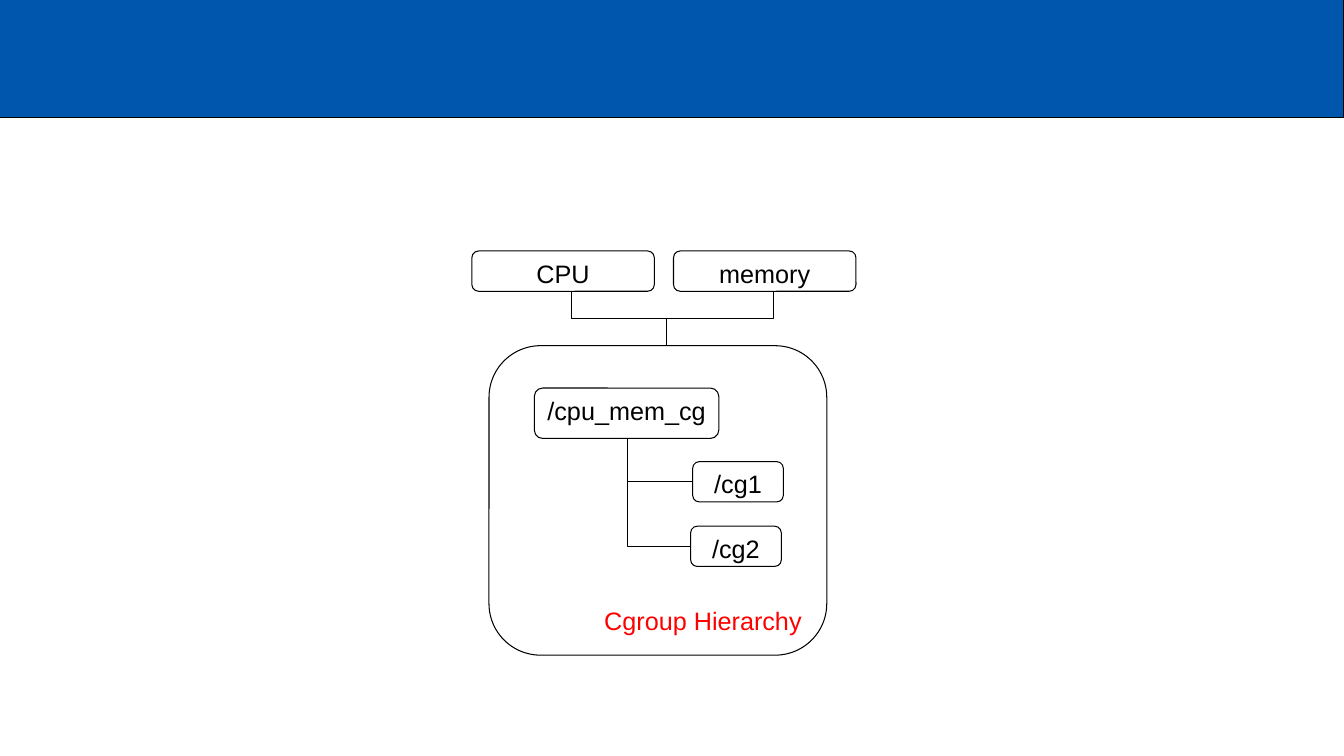
"""Build a slide showing a cgroup hierarchy with CPU and memory controllers."""
from pptx import Presentation
from pptx.dml.color import RGBColor
from pptx.enum import shapes, text
from pptx.oxml import parse_xml
from pptx.oxml.ns import nsdecls
from pptx.util import Inches, Pt

BLUE = RGBColor(0x00, 0x56, 0xAC)
BLACK = RGBColor(0x00, 0x00, 0x00)
WHITE = RGBColor(0xFF, 0xFF, 0xFF)
RED = RGBColor(0xFF, 0x00, 0x00)
RECT = shapes.MSO_SHAPE.RECTANGLE
ROUND = shapes.MSO_SHAPE.ROUNDED_RECTANGLE
TOP, BOTTOM = text.MSO_ANCHOR.TOP, text.MSO_ANCHOR.BOTTOM
CENTER, RIGHT = text.PP_ALIGN.CENTER, text.PP_ALIGN.RIGHT

prs = Presentation()
prs.slide_width, prs.slide_height = Inches(13.33), Inches(7.5)
s = prs.slides.add_slide(prs.slide_layouts[6])


def add_box(kind, x, y, w, h, fill=WHITE):
    sp = s.shapes.add_shape(kind, Inches(x), Inches(y), Inches(w), Inches(h))
    sp.shadow.inherit = False
    sp.fill.solid()
    sp.fill.fore_color.rgb = fill
    sp.line.color.rgb = BLACK
    sp.line.width = Pt(0.75)
    return sp


add_box(RECT, 0, 0, 13.33, 1.17, BLUE)

boxes = [
    ("CPU", 4.68, 2.49, 1.81, 0.4, CENTER, TOP, BLACK),
    ("memory", 6.68, 2.49, 1.81, 0.4, CENTER, TOP, BLACK),
    ("Cgroup Hierarchy", 4.85, 3.43, 3.35, 3.07, RIGHT, BOTTOM, RED),
    ("/cpu_mem_cg", 5.3, 3.85, 1.83, 0.5, CENTER, TOP, BLACK),
    ("/cg1", 6.87, 4.58, 0.9, 0.4, CENTER, TOP, BLACK),
    ("/cg2", 6.85, 5.22, 0.9, 0.4, CENTER, TOP, BLACK),
]
for label, x, y, w, h, align, anchor, color in boxes:
    tf = add_box(ROUND, x, y, w, h).text_frame
    tf.word_wrap = align == RIGHT
    tf.vertical_anchor = anchor
    p = tf.paragraphs[0]
    p.text = label
    p.alignment = align
    p.font.name = "Arial"
    p.font.size = Pt(18)
    p.font.color.rgb = color

elbows = [
    ("bentConnector3", 5.67, 2.89, 6.61, 3.43),
    ("bentConnector3", 7.67, 2.89, 6.61, 3.43),
    ("bentConnector2", 6.22, 4.35, 6.87, 4.78),
    ("bentConnector2", 6.22, 4.35, 6.85, 5.42),
]
for preset, x1, y1, x2, y2 in elbows:
    cx, cy = (x1 + x2) / 2, (y1 + y2) / 2
    dx, dy = (x2 - x1) / 2, (y2 - y1) / 2
    line = s.shapes.add_connector(
        shapes.MSO_CONNECTOR.ELBOW,
        Inches(cx - dy), Inches(cy + dx), Inches(cx + dy), Inches(cy - dx))
    line.line.color.rgb = BLACK
    line.line.width = Pt(0.75)
    spPr = line._element.spPr
    spPr.xfrm.set("rot", "5400000")
    spPr.prstGeom.set("prst", preset)
    spPr.append(parse_xml(f"<a:effectLst {nsdecls('a')}/>"))

prs.save("out.pptx")
